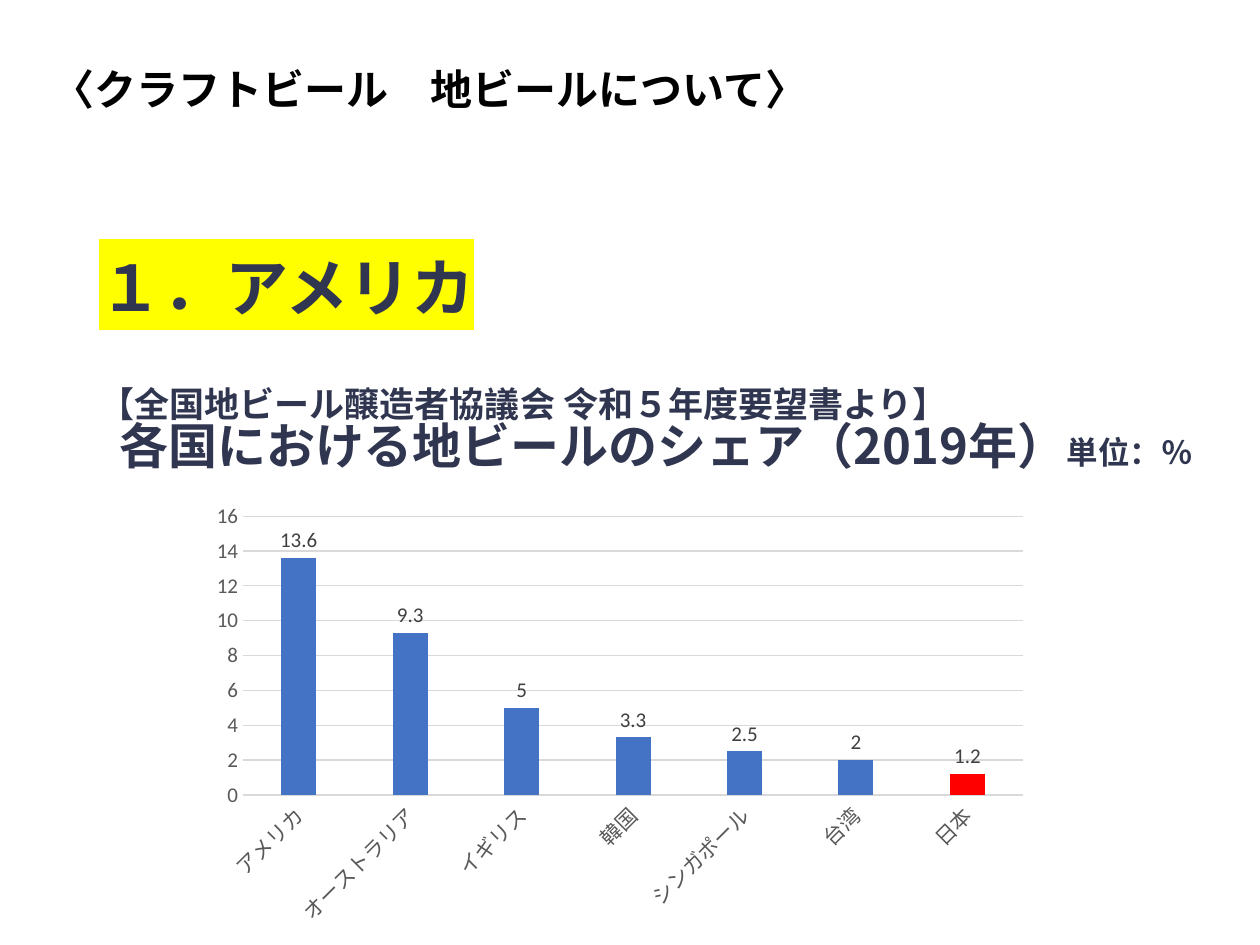
import pptx
import pptx.chart.data
import pptx.dml.color
import pptx.enum.chart
import pptx.enum.text
import pptx.oxml
import pptx.oxml.ns
import pptx.util
from dataclasses import dataclass

PX = 914400 // 126


@dataclass(frozen=True)
class Theme:
    latin: str = "Calibri"
    japanese: str = "Noto Sans CJK JP"
    black: str = "000000"
    navy: str = "313650"
    highlight: str = "FFFF00"
    bar: str = "4472C4"
    japan_bar: str = "FF0000"
    axis_text: str = "595959"
    label_text: str = "404040"
    grid: str = "D9D9D9"
    title: int = 24
    answer: int = 36
    source: int = 20
    heading: int = 28
    unit: int = 18
    chart: int = 12


THEME = Theme()
ALIGN = pptx.enum.text.PP_ALIGN
ANCHOR = pptx.enum.text.MSO_ANCHOR

TEXT_BOXES = [
    dict(box=(87, 175, 1086, 233), anchor=ANCHOR.MIDDLE, font=THEME.japanese,
         color=THEME.navy, highlight=THEME.highlight,
         paragraphs=[(ALIGN.LEFT, 0.9, [("１．アメリカ", THEME.answer)])]),
    dict(box=(87, 381, 1138, 440), anchor=ANCHOR.TOP, font=THEME.japanese,
         color=THEME.navy, highlight=None,
         paragraphs=[
             (ALIGN.LEFT, 0.9,
              [("【全国地ビール醸造者協議会 令和５年度要望書より】", THEME.source)]),
             (ALIGN.CENTER, 0.83,
              [("各国における地ビールのシェア（2019年）", THEME.heading),
               ("単位：％", THEME.unit)]),
         ]),
    dict(box=(40, 53, 1086, 77), anchor=ANCHOR.MIDDLE, font=THEME.latin,
         color=THEME.black, highlight=None,
         paragraphs=[(ALIGN.LEFT, 0.9,
                      [("〈クラフトビール　地ビールについて〉", THEME.title)])]),
]

CHART_BOX = (200, 495, 840, 440)
SHARES = {
    "アメリカ": 13.6,
    "オーストラリア": 9.3,
    "イギリス": 5,
    "韓国": 3.3,
    "シンガポール": 2.5,
    "台湾": 2,
    "日本": 1.2,
}


def rgb(color):
    return pptx.dml.color.RGBColor.from_string(color)


def emu(box):
    return [length * PX for length in box]


def style_font(font, size, color, name=THEME.latin):
    font.size = pptx.util.Pt(size)
    font.name = name
    font.color.rgb = rgb(color)


def drawing_element(tag, **attributes):
    element = pptx.oxml.parse_xml(f"<a:{tag} {pptx.oxml.ns.nsdecls('a')}/>")
    for key, value in attributes.items():
        element.set(key, value)
    return element


def style_run(run, size, item):
    style_font(run.font, size, item["color"], item["font"])
    run.font.bold = True
    latin = run.font._element.find(pptx.oxml.ns.qn("a:latin"))
    latin.addnext(drawing_element("ea", typeface=THEME.japanese))
    if item["highlight"]:
        highlight = drawing_element("highlight")
        highlight.append(drawing_element("srgbClr", val=item["highlight"]))
        latin.addprevious(highlight)


def add_text(slide, item):
    text_frame = slide.shapes.add_textbox(*emu(item["box"])).text_frame
    text_frame.word_wrap = True
    text_frame.vertical_anchor = item["anchor"]
    for index, (alignment, spacing, pieces) in enumerate(item["paragraphs"]):
        paragraph = text_frame.add_paragraph() if index else text_frame.paragraphs[0]
        paragraph.alignment = alignment
        paragraph.line_spacing = spacing
        for text, size in pieces:
            run = paragraph.add_run()
            run.text = text
            style_run(run, size, item)


def style_axis(axis):
    axis.major_tick_mark = pptx.enum.chart.XL_TICK_MARK.NONE
    axis.minor_tick_mark = pptx.enum.chart.XL_TICK_MARK.NONE
    style_font(axis.tick_labels.font, THEME.chart, THEME.axis_text)


def style_line(line):
    line.color.rgb = rgb(THEME.grid)
    line.width = pptx.util.Pt(0.75)


def add_share_chart(slide):
    data = pptx.chart.data.CategoryChartData()
    data.categories = list(SHARES)
    data.add_series("シェア", list(SHARES.values()))
    chart = slide.shapes.add_chart(
        pptx.enum.chart.XL_CHART_TYPE.COLUMN_CLUSTERED, *emu(CHART_BOX), data).chart
    chart.has_legend = False
    chart.has_title = False
    style_font(chart.font, THEME.chart, THEME.axis_text)

    category_axis, value_axis = chart.category_axis, chart.value_axis
    for axis in (category_axis, value_axis):
        style_axis(axis)
    style_line(category_axis.format.line)
    category_text = category_axis._element.find(pptx.oxml.ns.qn("c:txPr"))
    category_text.find(pptx.oxml.ns.qn("a:bodyPr")).set("rot", "-2700000")
    value_axis.minimum_scale, value_axis.maximum_scale = 0, 16
    value_axis.major_unit = 2
    value_axis.format.line.fill.background()
    style_line(value_axis.major_gridlines.format.line)

    plot = chart.plots[0]
    plot.vary_by_categories = False
    plot.gap_width = 219
    plot.overlap = -27
    series = plot.series[0]
    japan = series.points[list(SHARES).index("日本")]
    for bar, color in ((series, THEME.bar), (japan, THEME.japan_bar)):
        bar.format.fill.solid()
        bar.format.fill.fore_color.rgb = rgb(color)
    labels = series.data_labels
    labels.show_value = True
    labels.position = pptx.enum.chart.XL_LABEL_POSITION.OUTSIDE_END
    style_font(labels.font, THEME.chart, THEME.label_text)


def main():
    presentation = pptx.Presentation()
    presentation.slide_width, presentation.slide_height = emu((1260, 945))
    slide = presentation.slides.add_slide(presentation.slide_layouts[6])
    answer, heading, title = TEXT_BOXES
    add_text(slide, answer)
    add_text(slide, heading)
    add_share_chart(slide)
    add_text(slide, title)
    presentation.save("out.pptx")


if __name__ == "__main__":
    main()
